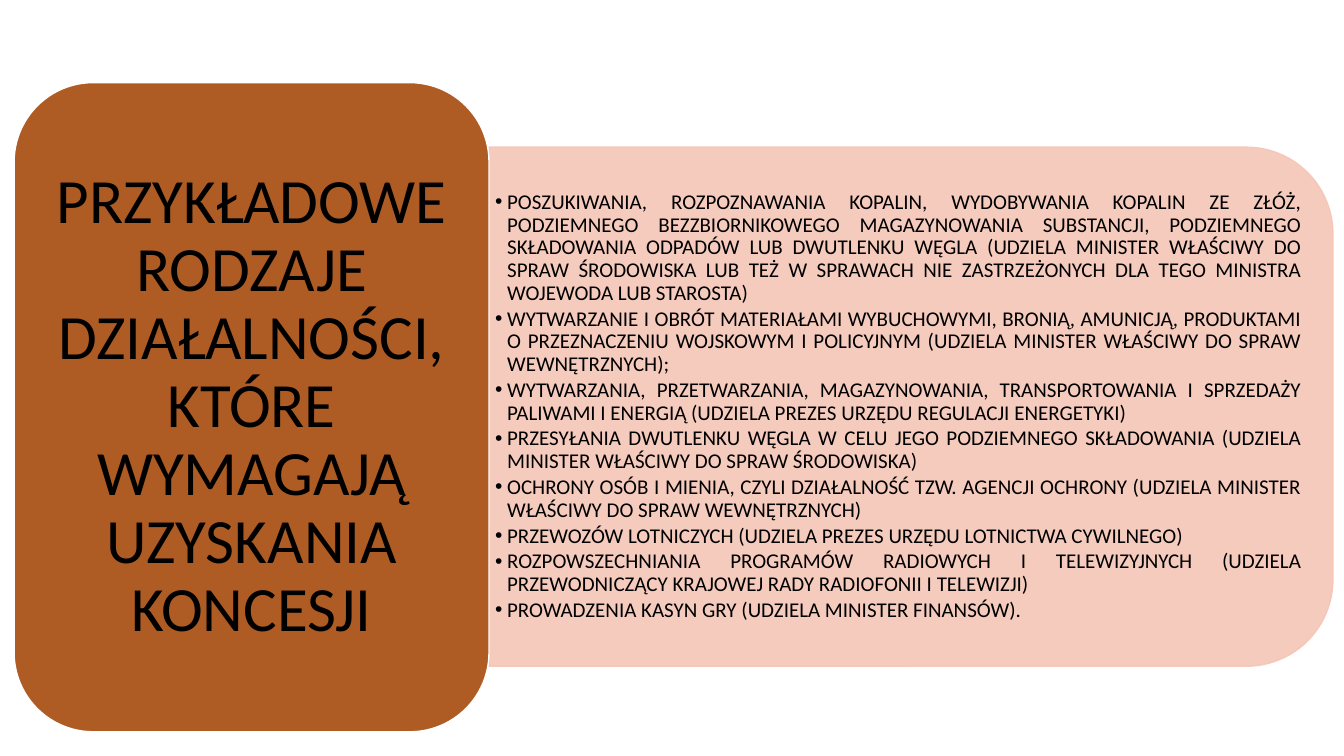
"""Build the slide listing activities that require a concession."""
from dataclasses import dataclass

from lxml.etree import SubElement
from pptx import Presentation
from pptx.dml.color import RGBColor
from pptx.enum.shapes import MSO_SHAPE
from pptx.enum.text import MSO_ANCHOR, PP_ALIGN
from pptx.oxml.ns import qn
from pptx.slide import Slide
from pptx.util import Inches, Pt

BLACK = RGBColor(0x00, 0x00, 0x00)
WHITE = RGBColor(0xFF, 0xFF, 0xFF)
BROWN = RGBColor(0xAF, 0x5C, 0x24)
PINK = RGBColor(0xF5, 0xC6, 0xB6)

TITLE = "PRZYKŁADOWE RODZAJE DZIAŁALNOŚCI, KTÓRE WYMAGAJĄ UZYSKANIA KONCESJI"
ACTIVITIES = (
    "POSZUKIWANIA, ROZPOZNAWANIA KOPALIN, WYDOBYWANIA KOPALIN ZE ZŁÓŻ, "
    "PODZIEMNEGO BEZZBIORNIKOWEGO MAGAZYNOWANIA SUBSTANCJI, PODZIEMNEGO "
    "SKŁADOWANIA ODPADÓW LUB DWUTLENKU WĘGLA (UDZIELA MINISTER WŁAŚCIWY DO "
    "SPRAW ŚRODOWISKA LUB TEŻ W SPRAWACH NIE ZASTRZEŻONYCH DLA TEGO MINISTRA "
    "WOJEWODA LUB STAROSTA)",
    "WYTWARZANIE I OBRÓT MATERIAŁAMI WYBUCHOWYMI, BRONIĄ, AMUNICJĄ, PRODUKTAMI "
    "O PRZEZNACZENIU WOJSKOWYM I POLICYJNYM (UDZIELA MINISTER WŁAŚCIWY DO SPRAW "
    "WEWNĘTRZNYCH);",
    "WYTWARZANIA, PRZETWARZANIA, MAGAZYNOWANIA, TRANSPORTOWANIA I SPRZEDAŻY "
    "PALIWAMI I ENERGIĄ (UDZIELA PREZES URZĘDU REGULACJI ENERGETYKI)",
    "PRZESYŁANIA DWUTLENKU WĘGLA W CELU JEGO PODZIEMNEGO SKŁADOWANIA (UDZIELA "
    "MINISTER WŁAŚCIWY DO SPRAW ŚRODOWISKA)",
    "OCHRONY OSÓB I MIENIA, CZYLI DZIAŁALNOŚĆ TZW. AGENCJI OCHRONY (UDZIELA "
    "MINISTER WŁAŚCIWY DO SPRAW WEWNĘTRZNYCH)",
    "PRZEWOZÓW LOTNICZYCH (UDZIELA PREZES URZĘDU LOTNICTWA CYWILNEGO)",
    "ROZPOWSZECHNIANIA PROGRAMÓW RADIOWYCH I TELEWIZYJNYCH (UDZIELA "
    "PRZEWODNICZĄCY KRAJOWEJ RADY RADIOFONII I TELEWIZJI)",
    "PROWADZENIA KASYN GRY (UDZIELA MINISTER FINANSÓW).",
)


@dataclass(frozen=True)
class Box:
    left: float
    top: float
    width: float
    height: float

    def lengths(self) -> tuple[int, ...]:
        return tuple(Inches(v) for v in (self.left, self.top, self.width, self.height))


@dataclass(frozen=True)
class Panel:
    box: Box
    preset: MSO_SHAPE
    fill: RGBColor
    line: RGBColor
    rotation: int = 0
    opacity: int = 100


@dataclass(frozen=True)
class Text:
    box: Box
    paragraphs: tuple[str, ...]
    size: int
    align: PP_ALIGN
    margin_x: float
    margin_y: float
    space_after: float = 0
    bulleted: bool = False


PANELS = (
    Panel(Box(6.46, -0.15, 5.15, 8.37), MSO_SHAPE.ROUND_2_SAME_RECTANGLE,
          PINK, PINK, rotation=90, opacity=90),
    Panel(Box(0.14, 0.82, 4.71, 6.44), MSO_SHAPE.ROUNDED_RECTANGLE, BROWN, WHITE),
)
TEXTS = (
    Text(Box(4.85, 1.71, 8.12, 4.65), ACTIVITIES, 15, PP_ALIGN.JUSTIFY,
         0.06, 0.03, space_after=2.25, bulleted=True),
    Text(Box(0.37, 1.05, 4.25, 5.98), (TITLE,), 45, PP_ALIGN.CENTER, 0.19, 0.09),
)


def add_panel(s: Slide, panel: Panel) -> None:
    sp = s.shapes.add_shape(panel.preset, *panel.box.lengths())
    sp.rotation = panel.rotation
    sp.shadow.inherit = False
    sp.fill.solid()
    sp.fill.fore_color.rgb = panel.fill
    sp.line.color.rgb = panel.line
    sp.line.width = Pt(1)
    if panel.opacity < 100:
        for color in sp._element.spPr.iter(qn("a:srgbClr")):
            SubElement(color, qn("a:alpha")).set("val", str(panel.opacity * 1000))


def add_bullet(p) -> None:
    pPr = p._p.get_or_add_pPr()
    pPr.set("marL", str(Inches(0.12)))
    pPr.set("indent", str(Inches(-0.12)))
    SubElement(pPr, qn("a:buFont")).set("typeface", "Arial")
    SubElement(pPr, qn("a:buChar")).set("char", "•")


def add_text(s: Slide, text: Text) -> None:
    tf = s.shapes.add_textbox(*text.box.lengths()).text_frame
    tf.word_wrap = True
    tf.vertical_anchor = MSO_ANCHOR.MIDDLE
    tf.margin_left = tf.margin_right = Inches(text.margin_x)
    tf.margin_top = tf.margin_bottom = Inches(text.margin_y)
    for i, content in enumerate(text.paragraphs):
        p = tf.add_paragraph() if i else tf.paragraphs[0]
        if text.bulleted:
            p.level = 1
            add_bullet(p)
        p.alignment = text.align
        p.line_spacing = 0.9
        p.space_after = Pt(text.space_after)
        r = p.add_run()
        r.text = content
        r.font.name = "Calibri"
        r.font.size = Pt(text.size)
        r.font.color.rgb = BLACK


def main() -> None:
    prs = Presentation()
    prs.slide_width = Inches(13.33)
    prs.slide_height = Inches(7.5)
    s = prs.slides.add_slide(prs.slide_layouts[6])
    for panel, text in zip(PANELS, TEXTS):
        add_panel(s, panel)
        add_text(s, text)
    prs.save("out.pptx")


if __name__ == "__main__":
    main()
